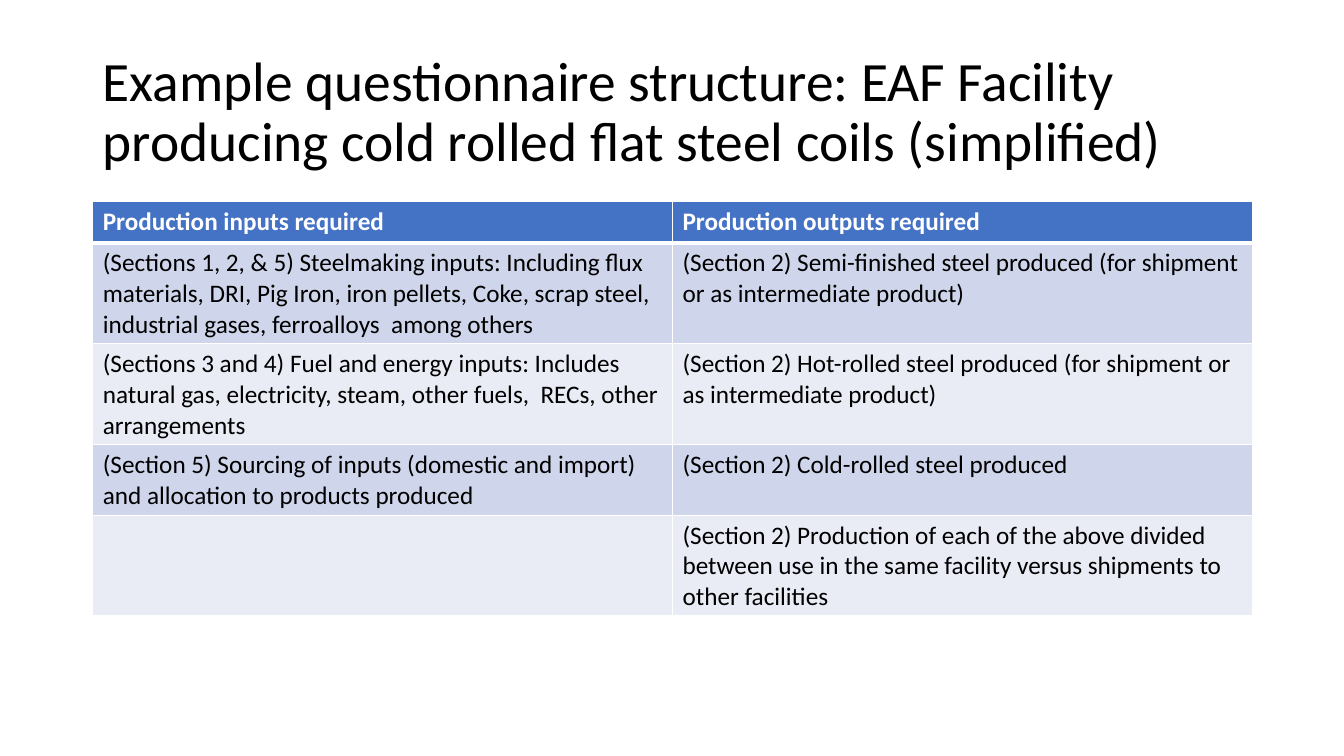
from pptx import Presentation
from pptx.dml.color import RGBColor
from pptx.enum.text import MSO_ANCHOR
from pptx.oxml.ns import qn
from pptx.util import Inches, Pt
from lxml import etree

MIDDLE = MSO_ANCHOR.MIDDLE
BLANK_LAYOUT = 6
WIDTH, HEIGHT = 13.33, 7.5
LEFT, CONTENT_WIDTH = 0.92, 11.5
TITLE_TOP, TITLE_HEIGHT = 0.4, 1.45
TABLE_TOP, TABLE_HEIGHT, ROW_HEIGHT = 2, 4.11, 0.41
FONT = "Calibri"
COLORS = {
    "ink": "000000",
    "white": "FFFFFF",
    "header": "4472C4",
    "odd_row": "CFD5EA",
    "even_row": "E9EBF5",
}

TITLE = ("Example questionnaire structure: EAF Facility "
         "producing cold rolled flat steel coils (simplified)")
HEADINGS = ("Production inputs required", "Production outputs required")
# Inputs and outputs; the headings lie over the empty first row
SECTIONS = [
    ("", ""),
    ("(Sections 1, 2, & 5) Steelmaking inputs: Including flux materials, DRI, Pig Iron, "
     "iron pellets, Coke, scrap steel, industrial gases, ferroalloys  among others",
     "(Section 2) Semi-finished steel produced (for shipment or as intermediate product)"),
    ("(Sections 3 and 4) Fuel and energy inputs: Includes natural gas, electricity, "
     "steam, other fuels,  RECs, other arrangements",
     "(Section 2) Hot-rolled steel produced (for shipment or as intermediate product)"),
    ("(Section 5) Sourcing of inputs (domestic and import) and allocation to "
     "products produced",
     "(Section 2) Cold-rolled steel produced"),
    ("",
     "(Section 2) Production of each of the above divided between use in the same "
     "facility versus shipments to other facilities"),
]


def write_text(frame, text, size, color, bold=False):
    para = frame.paragraphs[0]
    para.text = text
    formats = {"name": FONT, "size": Pt(size), "bold": bold}
    for span in para.runs:
        for attribute, value in formats.items():
            setattr(span.font, attribute, value)
        span.font.color.rgb = RGBColor.from_string(COLORS[color])
    return para


def add_title(page):
    box = page.shapes.add_textbox(Inches(LEFT), Inches(TITLE_TOP),
                                  Inches(CONTENT_WIDTH), Inches(TITLE_HEIGHT))
    frame = box.text_frame
    frame.word_wrap = True
    frame.vertical_anchor = MIDDLE
    write_text(frame, TITLE, 39.6, "ink").line_spacing = 0.9


def set_borders(cell, widths):
    """Draw white borders; they must come before the fill in the cell's XML."""
    properties = cell._tc.get_or_add_tcPr()
    for position, (side, points) in enumerate(widths.items()):
        line = etree.Element(qn(f"a:ln{side}"), w=str(Pt(points)))
        fill = etree.SubElement(line, qn("a:solidFill"))
        etree.SubElement(fill, qn("a:srgbClr"), val=COLORS["white"])
        properties.insert(position, line)


def style_cell(cell, row, text):
    is_header = row == 0
    fill = "header" if is_header else "odd_row" if row % 2 else "even_row"
    cell.fill.solid()
    cell.fill.fore_color.rgb = RGBColor.from_string(COLORS[fill])
    if text:
        write_text(cell.text_frame, text, 18, "white" if is_header else "ink", is_header)
    set_borders(cell, {"L": 1, "R": 1, "T": 3 if row == 1 else 1,
                       "B": 3 if is_header else 1})


def add_banded_table(page, rows, height):
    """Rows start at the least height and grow with their text."""
    holder = page.shapes.add_table(len(rows), len(HEADINGS), Inches(LEFT),
                                   Inches(TABLE_TOP), Inches(CONTENT_WIDTH), Inches(height))
    table = holder.table
    for column in table.columns:
        column.width = Inches(CONTENT_WIDTH / len(HEADINGS))
    for row, texts in enumerate(rows):
        table.rows[row].height = Inches(ROW_HEIGHT)
        for column, text in enumerate(texts):
            style_cell(table.cell(row, column), row, text)
    holder.height = Inches(height)


def main():
    deck = Presentation()
    deck.slide_width, deck.slide_height = Inches(WIDTH), Inches(HEIGHT)
    page = deck.slides.add_slide(deck.slide_layouts[BLANK_LAYOUT])
    add_title(page)
    add_banded_table(page, SECTIONS, TABLE_HEIGHT)
    add_banded_table(page, [HEADINGS], ROW_HEIGHT)
    deck.save("out.pptx")


if __name__ == "__main__":
    main()
